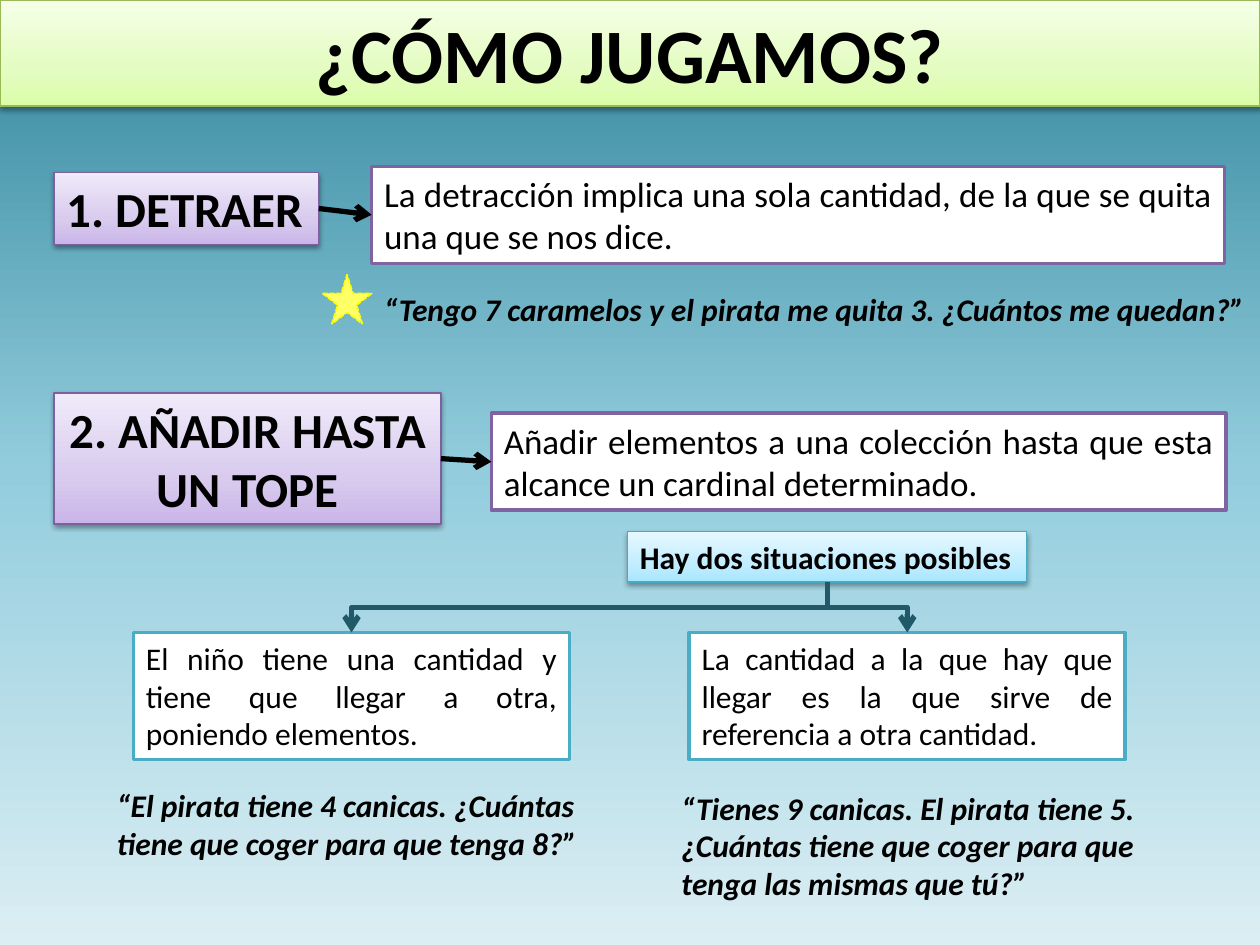
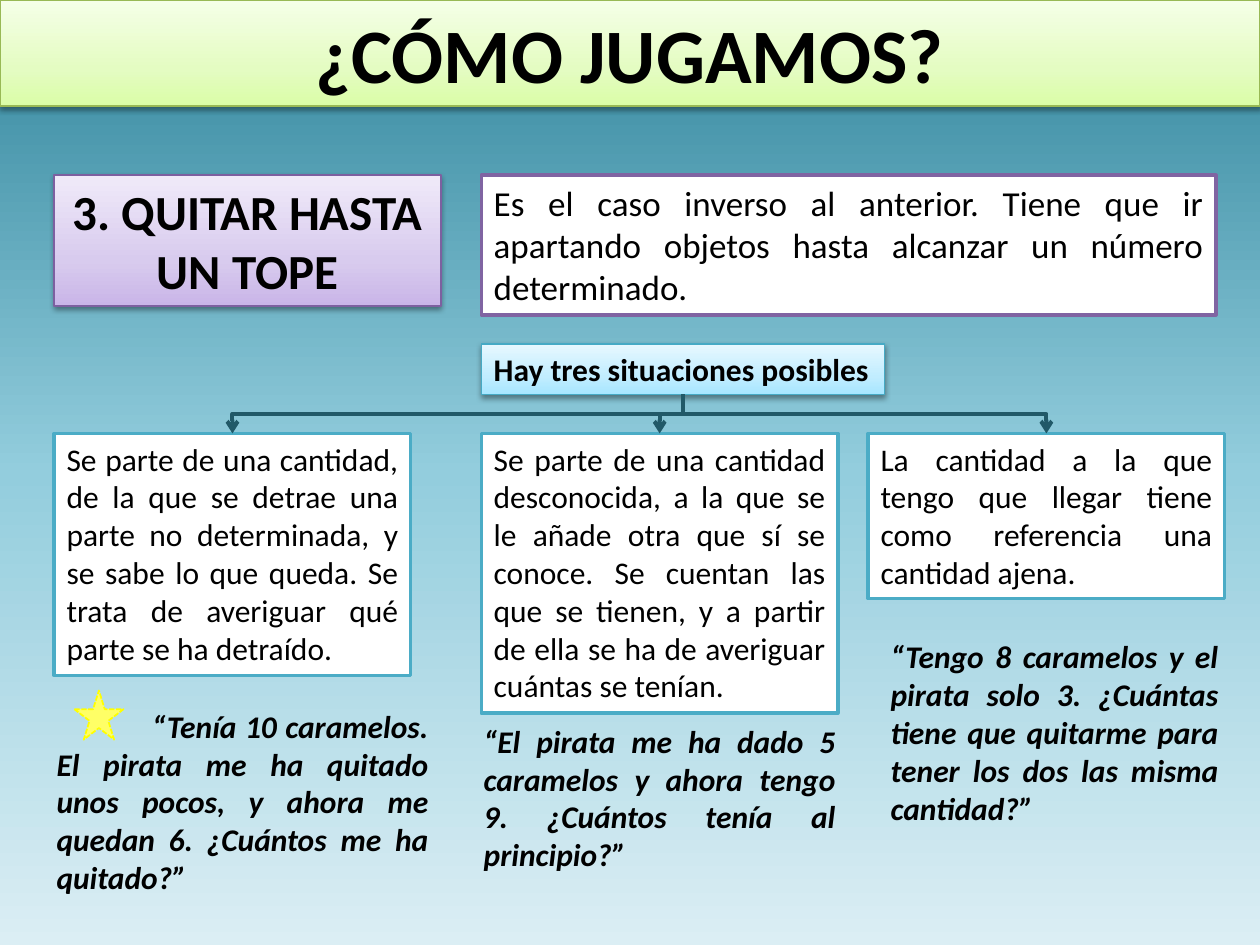
from dataclasses import dataclass
from typing import NamedTuple

from lxml.etree import SubElement
from pptx import Presentation
from pptx.dml.color import RGBColor
from pptx.enum.dml import MSO_LINE
from pptx.enum.shapes import MSO_CONNECTOR as Link, MSO_SHAPE as Preset
from pptx.enum.text import MSO_ANCHOR as Anchor, MSO_AUTO_SIZE as AutoSize, PP_ALIGN as Align
from pptx.oxml.ns import qn
from pptx.util import Inches, Pt

TOP, LEFT, BOTTOM, RIGHT = range(4)  # connection sites of a rectangle
TITLE_ONLY = 5


class Box(NamedTuple):
    left: float
    top: float
    width: float
    height: float

    def lengths(self):
        return [Inches(value) for value in self]


class Look(NamedTuple):
    """Fill (one colour or gradient stops), line, and whether a shadow is cast."""
    fill: object
    line: str
    line_width: float
    shadow: bool = False


class Type(NamedTuple):
    size: float
    bold: bool = False
    italic: bool = False


@dataclass(frozen=True)
class Theme:
    font: str = "Calibri"
    ink: str = "000000"
    branch: str = "215968"
    star: str = "FFFF66"
    star_edge: str = "FFFF00"
    sky: tuple = ((0, "31859C"), (50, "93CDDD"), (100, "DBEEF4"))
    band: Look = Look(((0, "DAFDA7"), (35, "E4FCC2"), (100, "F5FFE7")), "98B955", 0.75, True)
    label: Look = Look(((0, "C9B5E8"), (35, "D8CBEE"), (100, "F0EAF9")), "7D60A0", 0.75, True)
    header: Look = Look(((0, "A7E6FF"), (35, "C1EDFF"), (100, "E7F8FF")), "46AAC5", 0.75, True)
    definition: Look = Look("FFFFFF", "8064A2", 2)
    situation: Look = Look("FFFFFF", "4BACC6", 2)
    title_type: Type = Type(44, bold=True)
    label_type: Type = Type(28, bold=True)
    definition_type: Type = Type(20)
    header_type: Type = Type(18, bold=True)
    situation_type: Type = Type(18)
    quote_type: Type = Type(18, bold=True, italic=True)


THEME = Theme()


class Situation(NamedTuple):
    """One column; the quote box is relative to the column's top left corner."""
    left: float
    height: float
    text: str
    quote: str
    quote_box: Box
    quote_indent: float = 0


def colour(code):
    return RGBColor.from_string(code)


def paint_gradient(fill, parent, stops, angle):
    fill.gradient()
    gradient = parent.find(qn("a:gradFill"))
    stop_list = gradient.find(qn("a:gsLst"))
    for stop in list(stop_list):
        stop_list.remove(stop)
    for position, code in stops:
        stop = SubElement(stop_list, qn("a:gs"), pos=str(position * 1000))
        SubElement(stop, qn("a:srgbClr"), val=code)
    gradient.find(qn("a:lin")).set("ang", str(angle * 60000))


def cast_shadow(shape):
    effects = shape._element.spPr.find(qn("a:effectLst"))
    shadow = SubElement(effects, qn("a:outerShdw"), blurRad=str(Pt(3.1)), dist=str(Pt(1.6)),
                        dir="5400000", rotWithShape="0")
    black = SubElement(shadow, qn("a:srgbClr"), val="000000")
    SubElement(black, qn("a:alpha"), val="38000")


def dress(shape, look):
    if isinstance(look.fill, str):
        shape.fill.solid()
        shape.fill.fore_color.rgb = colour(look.fill)
    else:
        paint_gradient(shape.fill, shape._element.spPr, look.fill, 270)
    shape.line.color.rgb = colour(look.line)
    shape.line.width = Pt(look.line_width)
    shape.shadow.inherit = False
    if look.shadow:
        cast_shadow(shape)


def write(shape, text, type_style, align=Align.LEFT, wrap=True, indent=0):
    frame = shape.text_frame
    frame.word_wrap = wrap
    frame.auto_size = AutoSize.SHAPE_TO_FIT_TEXT
    frame.vertical_anchor = Anchor.TOP
    para = frame.paragraphs[0]
    para.alignment = align
    if indent:
        para._p.get_or_add_pPr().set("indent", str(Inches(indent)))
    span = para.add_run()
    span.text = text
    font = span.font
    font.name, font.size = THEME.font, Pt(type_style.size)
    font.bold, font.italic = type_style.bold, type_style.italic
    font.color.rgb = colour(THEME.ink)


def add_panel(page, box, look, text, type_style, align=Align.JUSTIFY, wrap=True):
    panel = page.shapes.add_shape(Preset.RECTANGLE, *box.lengths())
    dress(panel, look)
    write(panel, text, type_style, align, wrap)
    return panel


def add_quote(page, box, text, **layout):
    quote = page.shapes.add_textbox(*box.lengths())
    write(quote, text, THEME.quote_type, **layout)


def add_star(page, left, top):
    star = page.shapes.add_shape(Preset.STAR_5_POINT, *Box(left, top, 0.39, 0.39).lengths())
    dress(star, Look(THEME.star, THEME.star_edge, 1))
    star.line.dash_style = MSO_LINE.SQUARE_DOT


def add_arrow(page, kind, start, start_site, end, end_site, code, width):
    arrow = page.shapes.add_connector(kind, 0, 0, 0, 0)
    arrow.begin_connect(start, start_site)
    arrow.end_connect(end, end_site)
    arrow.line.color.rgb = colour(code)
    arrow.line.width = Pt(width)
    properties = arrow._element.spPr
    SubElement(properties.find(qn("a:ln")), qn("a:tailEnd"), type="arrow")
    SubElement(properties, qn("a:effectLst"))
    return arrow


def add_branch(page, header, column, width):
    """Elbow arrow that leaves the header downwards: a quarter-turned connector."""
    branch = add_arrow(page, Link.ELBOW, header, BOTTOM, column, TOP, THEME.branch, width)
    start_x, start_y = header.left + header.width // 2, header.top + header.height
    end_x, end_y = column.left + column.width // 2, column.top
    drop, reach = end_y - start_y, abs(end_x - start_x)
    branch.left = (start_x + end_x - drop) // 2
    branch.top = (start_y + end_y - reach) // 2
    branch.width, branch.height = drop, reach
    rightwards = end_x > start_x
    frame = branch._element.spPr.find(qn("a:xfrm"))
    frame.set("rot", str((270 if rightwards else 90) * 60000))
    frame.set("flipH", "1" if rightwards else "0")
    frame.set("flipV", "0")


def add_page(deck):
    page = deck.slides.add_slide(deck.slide_layouts[TITLE_ONLY])
    title = page.shapes.title
    title.left, title.top, title.width, title.height = Box(0, 0, 10, 0.84).lengths()
    dress(title, THEME.band)
    write(title, "¿CÓMO JUGAMOS?", THEME.title_type, Align.CENTER)
    return page


def add_game(page, label_box, label_text, definition_box, definition_text,
             wrap=True, arrow=True):
    """Game name on the left and its definition on the right."""
    label = add_panel(page, label_box, THEME.label, label_text, THEME.label_type,
                      Align.CENTER if wrap else Align.LEFT, wrap)
    definition = add_panel(page, definition_box, THEME.definition, definition_text,
                           THEME.definition_type)
    if arrow:
        add_arrow(page, Link.STRAIGHT, label, RIGHT, definition, LEFT, THEME.ink, 3)


def add_situations(page, header_box, header_text, top, width, situations,
                   branch_width, quote_align):
    header = add_panel(page, header_box, THEME.header, header_text, THEME.header_type,
                       Align.LEFT, wrap=False)
    for item in situations:
        column = add_panel(page, Box(item.left, top, width, item.height), THEME.situation,
                           item.text, THEME.situation_type)
        add_branch(page, header, column, branch_width)
        offset = item.quote_box
        quote_box = offset._replace(left=item.left + offset.left, top=top + offset.top)
        add_quote(page, quote_box, item.quote, align=quote_align, indent=item.quote_indent)


def build_take_and_add(deck):
    page = add_page(deck)
    add_game(page, Box(0.43, 1.37, 2.1, 0.57), "1. DETRAER", Box(2.95, 1.32, 6.77, 0.77),
             "La detracción implica una sola cantidad, de la que se quita una que se nos dice.",
             wrap=False)
    add_quote(page, Box(2.95, 2.25, 7.07, 0.4),
              "“Tengo 7 caramelos y el pirata me quita 3. ¿Cuántos me quedan?”", wrap=False)
    add_star(page, 2.56, 2.18)
    add_game(page, Box(0.43, 3.12, 3.07, 1.04), "2. AÑADIR HASTA UN TOPE",
             Box(3.9, 3.28, 5.83, 0.77),
             "Añadir elementos a una colección hasta que esta alcance un cardinal determinado.")
    situations = [
        Situation(1.06, 1.01,
                  "El niño tiene una cantidad y tiene que llegar a otra, poniendo elementos.",
                  "“El pirata tiene 4 canicas. ¿Cuántas tiene que coger para que tenga 8?”",
                  Box(-0.23, 1.17, 4.02, 0.71)),
        Situation(5.47, 1.01,
                  "La cantidad a la que hay que llegar es la que sirve de referencia a otra "
                  "cantidad.",
                  "“Tienes 9 canicas. El pirata tiene 5. ¿Cuántas tiene que coger para que "
                  "tenga las mismas que tú?”",
                  Box(-0.16, 1.19, 3.94, 1.01)),
    ]
    add_situations(page, Box(4.98, 4.22, 3.17, 0.4), "Hay dos situaciones posibles",
                   5.02, 3.46, situations, 3, Align.LEFT)


def build_take_down_to(deck):
    page = add_page(deck)
    add_game(page, Box(0.43, 1.39, 3.07, 1.04), "3. QUITAR HASTA UN TOPE",
             Box(3.82, 1.39, 5.83, 1.11),
             "Es el caso inverso al anterior. Tiene que ir apartando objetos hasta alcanzar "
             "un número determinado.", arrow=False)
    situations = [
        Situation(0.43, 1.92,
                  "Se parte de una cantidad, de la que se detrae una parte no determinada, y "
                  "se sabe lo que queda. Se trata de averiguar qué parte se ha detraído.",
                  "“Tenía 10 caramelos. El pirata me ha quitado unos pocos, y ahora me quedan "
                  "6. ¿Cuántos me ha quitado?”",
                  Box(-0.08, 2.12, 3.15, 1.62), quote_indent=0.76),
        Situation(3.82, 2.22,
                  "Se parte de una cantidad desconocida, a la que se le añade otra que sí se "
                  "conoce. Se cuentan las que se tienen, y a partir de ella se ha de averiguar "
                  "cuántas se tenían.",
                  "“El pirata me ha dado 5 caramelos y ahora tengo 9. ¿Cuántos tenía al "
                  "principio?”",
                  Box(-0.08, 2.24, 2.99, 1.31)),
        Situation(6.89, 1.31,
                  "La cantidad a la que tengo que llegar tiene como referencia una cantidad "
                  "ajena.",
                  "“Tengo 8 caramelos y el pirata solo 3. ¿Cuántas tiene que quitarme para "
                  "tener los dos las misma cantidad?”",
                  Box(0.08, 1.57, 2.8, 1.62)),
    ]
    add_situations(page, Box(3.82, 2.73, 3.2, 0.4), "Hay tres situaciones posibles",
                   3.44, 2.83, situations, 2.25, Align.JUSTIFY)
    add_star(page, 0.59, 5.48)


def main():
    deck = Presentation()
    deck.slide_width, deck.slide_height = Inches(10), Inches(7.5)
    master = deck.slide_master
    sky = master.background.fill
    paint_gradient(sky, master._element.find(".//" + qn("p:bgPr")), THEME.sky, 90)
    build_take_and_add(deck)
    build_take_down_to(deck)
    deck.save("out.pptx")


if __name__ == "__main__":
    main()
